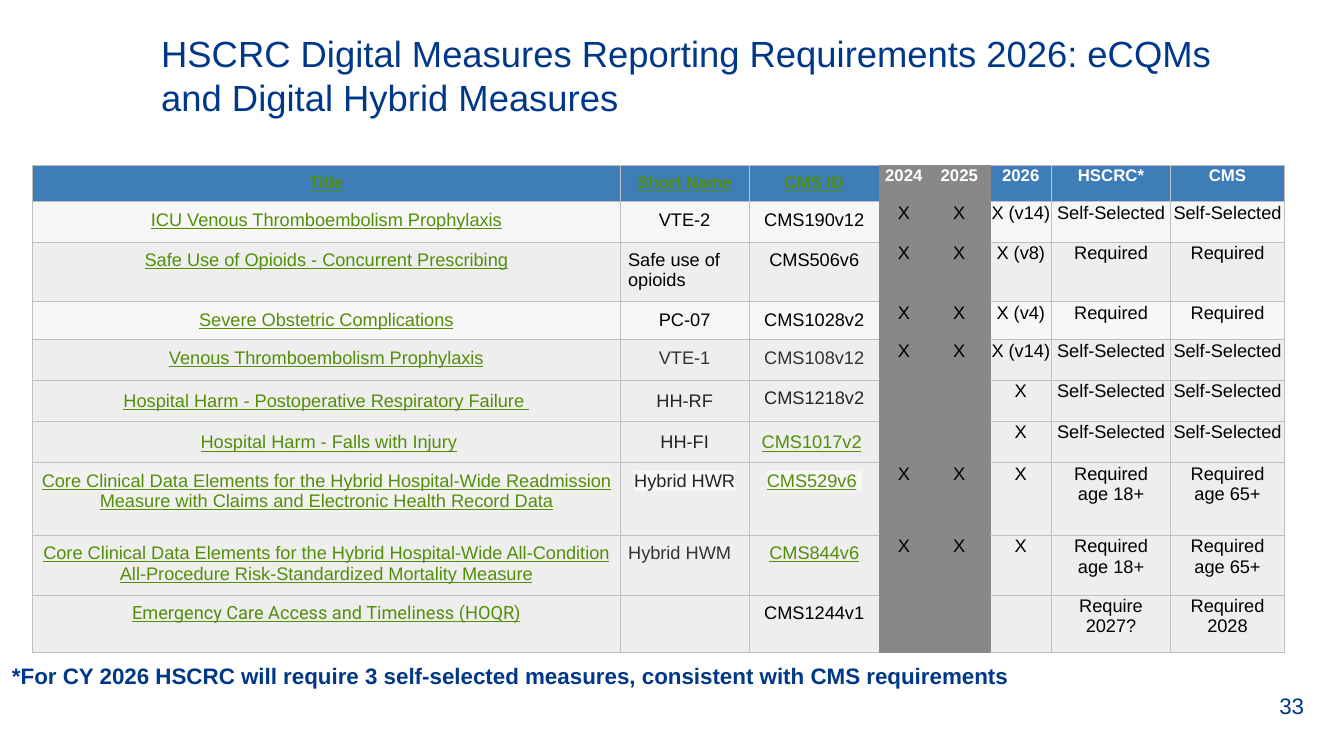
from lxml.etree import SubElement
from pptx import Presentation
from pptx.dml.color import RGBColor
from pptx.enum.text import MSO_ANCHOR, PP_ALIGN
from pptx.oxml import parse_xml
from pptx.oxml.ns import nsdecls, qn
from pptx.util import Inches, Pt

NAVY = RGBColor(0x00, 0x38, 0x89)
GREEN = RGBColor(0x53, 0x8E, 0x09)
BLUE = RGBColor(0x3F, 0x7D, 0xB9)
GRAY = RGBColor(0x88, 0x88, 0x88)
RULE = RGBColor(0xBF, 0xBF, 0xBF)
PALE = RGBColor(0xF7, 0xF7, 0xF7)
LIGHT = RGBColor(0xEE, 0xEE, 0xEE)
MIST = RGBColor(0xF2, 0xF2, 0xF2)
WHITE = RGBColor(0xFF, 0xFF, 0xFF)
BLACK = RGBColor(0x00, 0x00, 0x00)
CHARCOAL = RGBColor(0x33, 0x33, 0x33)
INK = RGBColor(0x24, 0x24, 0x24)

COLUMN_WIDTHS = [5.83, 1.28, 1.29, 0.49, 0.61, 0.61, 1.18, 1.13]
ROW_HEIGHTS = [0.35, 0.4, 0.58, 0.37, 0.4, 0.4, 0.4, 0.72, 0.58, 0.57]
PAST_YEARS = (3, 4)
PALE_ROWS = (1, 3)
MEASURES = [
    ["Title", "Short Name", "CMS ID", "2024", "2025", "2026", "HSCRC*", "CMS"],
    ["ICU Venous Thromboembolism Prophylaxis", "VTE-2", "CMS190v12",
     "X", "X", "X (v14)", "Self-Selected", "Self-Selected"],
    ["Safe Use of Opioids - Concurrent Prescribing", "Safe use of opioids", "CMS506v6",
     "X", "X", "X (v8)", "Required", "Required"],
    ["Severe Obstetric Complications", "PC-07", "CMS1028v2",
     "X", "X", "X (v4)", "Required", "Required"],
    ["Venous Thromboembolism Prophylaxis", "VTE-1", "CMS108v12",
     "X", "X", "X (v14)", "Self-Selected", "Self-Selected"],
    ["Hospital Harm - Postoperative Respiratory Failure ", "HH-RF", "CMS1218v2",
     "", "", "X", "Self-Selected", "Self-Selected"],
    ["Hospital Harm - Falls with Injury", "HH-FI", "CMS1017v2",
     "", "", "X", "Self-Selected", "Self-Selected"],
    ["Core Clinical Data Elements for the Hybrid Hospital-Wide Readmission Measure "
     "with Claims and Electronic Health Record Data", "Hybrid HWR", "CMS529v6",
     "X", "X", "X", "Required\nage 18+", "Required\nage 65+"],
    ["Core Clinical Data Elements for the Hybrid Hospital-Wide All-Condition "
     "All-Procedure Risk-Standardized Mortality Measure", "Hybrid HWM", "CMS844v6",
     "X", "X", "X", "Required\nage 18+", "Required\nage 65+"],
    ["Emergency Care Access and Timeliness (HOQR)", "", "CMS1244v1",
     "", "", "", "Require 2027?", "Required 2028"],
]
LINKED = {"color": GREEN, "underline": True}
SPECIAL_FORMATS = {
    (2, 1): {"align": PP_ALIGN.LEFT},
    (4, 1): {"color": CHARCOAL},
    (4, 2): {"color": CHARCOAL},
    (5, 0): {"spacing": 1.15},
    (5, 1): {"color": INK, "spacing": 1.15},
    (5, 2): {"color": INK, "highlight": LIGHT},
    (6, 0): {"spacing": 1.15, "before": " "},
    (6, 1): {"color": INK, "spacing": 1.15},
    (6, 2): {**LINKED, "spacing": 1.15, "after": " "},
    (7, 0): {"highlight": MIST},
    (7, 1): {"color": INK, "highlight": PALE},
    (7, 2): {**LINKED, "highlight": PALE, "after": " "},
    (8, 0): {"highlight": LIGHT},
    (8, 1): {"color": CHARCOAL, "align": PP_ALIGN.LEFT},
    (8, 2): {**LINKED, "highlight": LIGHT},
    (9, 0): {"font": "Roboto", "highlight": LIGHT},
}


def write_text(frame, text, size=13, color=BLACK, font="Arial", bold=False, underline=False,
               align=PP_ALIGN.LEFT, spacing=None, highlight=None, before="", after="", indent=0):
    """Fill a text frame, one paragraph per line, in one format."""
    for index, line in enumerate(text.split("\n")):
        para = frame.add_paragraph() if index else frame.paragraphs[0]
        para.alignment = align
        para.font.size = Pt(size)
        if spacing:
            para.line_spacing = spacing
        if indent:
            para._p.get_or_add_pPr().set("marL", str(Inches(indent)))
        for words, lined in ((before, False), (line, underline), (after, False)):
            if not words:
                continue
            span = para.add_run()
            span.text = words
            span.font.size = Pt(size)
            span.font.bold = bold
            span.font.underline = lined
            span.font.color.rgb = color
            span.font.name = font
            if highlight:
                properties = span._r.get_or_add_rPr()
                marker = SubElement(properties, qn("a:highlight"))
                SubElement(marker, qn("a:srgbClr")).set("val", str(highlight))
                properties.find(qn("a:solidFill")).addnext(marker)


def set_insets(target, inset):
    """Give a cell or text frame the same margin on all sides."""
    for side in ("left", "top", "right", "bottom"):
        setattr(target, f"margin_{side}", Inches(inset))


def add_label(page, box, text, anchor=MSO_ANCHOR.TOP, **format_options):
    """Place a wrapping text box in the given box."""
    frame = page.shapes.add_textbox(*map(Inches, box)).text_frame
    frame.word_wrap = True
    frame.vertical_anchor = anchor
    set_insets(frame, 0.1)
    write_text(frame, text, **format_options)


def set_borders(cell, column):
    """Draw cell borders, gray around the past years."""
    past = column in PAST_YEARS
    colors = {
        "lnL": GRAY if past or column - 1 in PAST_YEARS else RULE,
        "lnR": GRAY if past or column + 1 in PAST_YEARS else RULE,
        "lnT": GRAY if past else RULE,
        "lnB": GRAY if past else RULE,
    }
    properties = cell._tc.get_or_add_tcPr()
    for position, (side, color) in enumerate(colors.items()):
        properties.insert(position, parse_xml(
            f'<a:{side} {nsdecls("a")} w="{Pt(0.75)}"><a:solidFill>'
            f'<a:srgbClr val="{color}"/></a:solidFill></a:{side}>'))


def cell_format(row, column):
    """Return the text format of a table cell."""
    options = {"align": PP_ALIGN.CENTER}
    if row == 0:
        options.update(size=12, bold=True)
        options.update(LINKED if column < 3 else {"color": WHITE})
    elif column == 0:
        options.update(LINKED)
    return {**options, **SPECIAL_FORMATS.get((row, column), {})}


def cell_fill(row, column):
    """Return the fill colour of a table cell."""
    if column in PAST_YEARS:
        return GRAY
    if row == 0:
        return BLUE
    return PALE if row in PALE_ROWS else LIGHT


def add_measures_table(page, left, top):
    """Build the measures table from its top left corner."""
    box = (left, top, sum(COLUMN_WIDTHS), sum(ROW_HEIGHTS))
    table = page.shapes.add_table(len(ROW_HEIGHTS), len(COLUMN_WIDTHS), *map(Inches, box)).table
    table.first_row = table.horz_banding = False
    for column, width in zip(table.columns, COLUMN_WIDTHS):
        column.width = Inches(width)
    for row, (height, texts) in enumerate(zip(ROW_HEIGHTS, MEASURES)):
        table.rows[row].height = Inches(height)
        for column, text in enumerate(texts):
            cell = table.cell(row, column)
            set_insets(cell, 0.08 if column < 3 else 0.01)
            cell.fill.solid()
            cell.fill.fore_color.rgb = cell_fill(row, column)
            set_borders(cell, column)
            write_text(cell.text_frame, text, **cell_format(row, column))


def main():
    """Build and save the slide."""
    deck = Presentation()
    deck.slide_width, deck.slide_height = Inches(13.33), Inches(7.5)
    page = deck.slides.add_slide(deck.slide_layouts[6])
    add_label(page, (12.59, 6.8, 0.63, 0.4), "33", size=16, color=NAVY, anchor=MSO_ANCHOR.MIDDLE)
    add_label(page, (1, 0.21, 11.69, 0.7),
              "HSCRC Digital Measures Reporting Requirements 2026: eCQMs and Digital Hybrid Measures",
              size=26, color=NAVY, indent=0.5)
    add_measures_table(page, 0.32, 1.64)
    add_label(page, (0.02, 6.47, 10.78, 0.47),
              "*For CY 2026 HSCRC will require 3 self-selected measures, consistent with CMS requirements",
              size=16, color=NAVY, bold=True)
    deck.save("out.pptx")


if __name__ == "__main__":
    main()
